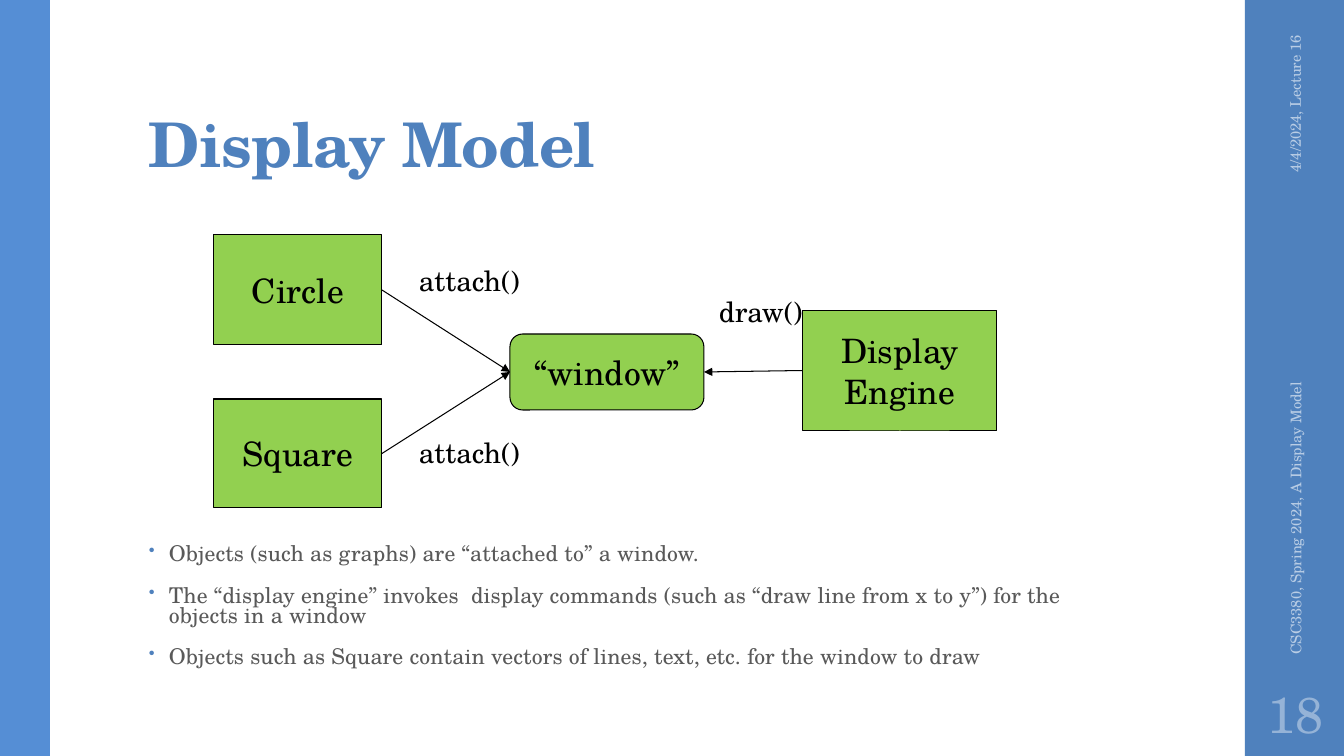
from pptx import Presentation
from pptx.dml.color import RGBColor
from pptx.enum.shapes import MSO_CONNECTOR as Connector, MSO_SHAPE as Shape
from pptx.enum.text import MSO_ANCHOR as Anchor, PP_ALIGN as Align
from pptx.oxml.ns import qn
from pptx.util import Emu, Pt
from lxml.etree import SubElement

EMU_PER_INCH = 914400
PX_PER_INCH = 100.8
RIGHT, LEFT = 3, 1


def px(length):
    return Emu(round(length * EMU_PER_INCH / PX_PER_INCH))


def color(value):
    return RGBColor.from_string(value)


class SlideBuilder:
    font = "TeX Gyre Schola"
    accent = "4F81BD"
    stripe = "558ED5"
    node_fill = "92D050"
    ink = "000000"
    body_ink = "595959"
    footer_ink = "B9CDE5"
    number_ink = "95B3D7"

    def __init__(self, slide):
        self.slide = slide

    def set_text(self, frame, text, size, ink, align=Align.LEFT, bold=False, tracking=0):
        for index, line in enumerate(text.split("\n")):
            paragraph = frame.paragraphs[0] if index == 0 else frame.add_paragraph()
            paragraph.alignment = align
            run = paragraph.add_run()
            run.text = line
            font = paragraph.font
            font.name, font.size, font.bold = self.font, Pt(size), bold
            font.color.rgb = color(ink)
            if tracking:
                run._r.get_or_add_rPr().set("spc", str(tracking))
        return frame.paragraphs

    def shape(self, kind, box, fill):
        shape = self.slide.shapes.add_shape(kind, *map(px, box))
        shape.shadow.inherit = False
        shape.fill.solid()
        shape.fill.fore_color.rgb = color(fill)
        return shape

    def band(self, box, fill):
        self.shape(Shape.RECTANGLE, box, fill).line.fill.background()

    def node(self, box, text, kind=Shape.RECTANGLE):
        node = self.shape(kind, box, self.node_fill)
        node.line.color.rgb = color(self.ink)
        node.line.width = Pt(0.75)
        frame = node.text_frame
        frame.word_wrap = False
        frame.vertical_anchor = Anchor.MIDDLE
        self.set_text(frame, text, 24, self.ink, Align.CENTER)
        return node

    def text(self, box, text, size, ink, anchor=Anchor.TOP, wrap=True, rotation=0, **style):
        label = self.slide.shapes.add_textbox(*map(px, box))
        label.rotation = rotation
        frame = label.text_frame
        frame.word_wrap = wrap
        frame.vertical_anchor = anchor
        return self.set_text(frame, text, size, ink, **style)

    def bullets(self, box, lines):
        for paragraph in self.text(box, "\n".join(lines), 15.5, self.body_ink, tracking=10):
            paragraph.line_spacing = 0.75
            paragraph.space_before, paragraph.space_after = Pt(14), Pt(2)
            properties = paragraph._p.get_or_add_pPr()
            properties.set("marL", str(px(20)))
            properties.set("indent", str(-px(20)))
            bullet_color = properties.makeelement(qn("a:buClr"))
            SubElement(bullet_color, qn("a:srgbClr"), val=self.accent)
            bullet_size = properties.makeelement(qn("a:buSzPct"), val="80000")
            bullet = properties.makeelement(qn("a:buChar"), char="•")
            defaults = properties.find(qn("a:defRPr"))
            for part in (bullet_color, bullet_size, bullet):
                defaults.addprevious(part)

    def arrow(self, source, source_side, target, target_side):
        arrow = self.slide.shapes.add_connector(Connector.STRAIGHT, 0, 0, 0, 0)
        arrow.begin_connect(source, source_side)
        arrow.end_connect(target, target_side)
        arrow.line.color.rgb = color(self.ink)
        arrow.line.width = Pt(0.75)
        properties = arrow._element.spPr
        SubElement(properties.find(qn("a:ln")), qn("a:tailEnd"), type="triangle")
        SubElement(properties, qn("a:effectLst"))


def main():
    deck = Presentation()
    deck.slide_width, deck.slide_height = px(1344), px(756)
    page = SlideBuilder(deck.slides.add_slide(deck.slide_layouts[6]))

    page.band((1245, 0, 99, 756), page.accent)
    page.band((0, 0, 50, 756), page.stripe)
    title, = page.text((139, 32, 1068, 154), "Display Model", 44, page.accent,
                       anchor=Anchor.BOTTOM, bold=True, tracking=-50)
    title.line_spacing = 0.9
    page.bullets((139, 541, 948, 140), [
        "Objects (such as graphs) are “attached to” a window.",
        "The “display engine” invokes  display commands (such as “draw line from x to y”) "
        "for the objects in a window",
        "Objects such as Square contain vectors of lines, text, etc. for the window to draw",
    ])

    page.text((1190, 110, 210, 40), "4/4/2024, Lecture 16", 10.5, page.footer_ink,
              anchor=Anchor.MIDDLE, rotation=270, align=Align.RIGHT)
    page.text((1098, 447, 395, 40), "CSC3380, Spring 2024, A Display Model", 10.5,
              page.footer_ink, anchor=Anchor.MIDDLE, rotation=270)
    page.text((1245, 680, 101, 66), "18", 36, page.number_ink,
              anchor=Anchor.MIDDLE, align=Align.CENTER)

    circle = page.node((214, 235, 168, 110), "Circle")
    square = page.node((214, 399, 168, 109), "Square")
    window = page.node((510, 334, 194, 76), "“window”", Shape.ROUNDED_RECTANGLE)
    engine = page.node((803, 310, 194, 121), "Display\nEngine")

    for drawable in (circle, square):
        page.arrow(drawable, RIGHT, window, LEFT)
    page.arrow(engine, LEFT, window, RIGHT)

    for left, top, width, call in (
        (409, 259, 122, "attach()"),
        (409, 431, 122, "attach()"),
        (709, 290, 106, "draw()"),
    ):
        page.text((left, top, width, 44), call, 20, page.ink, wrap=False)

    deck.save("out.pptx")


if __name__ == "__main__":
    main()
